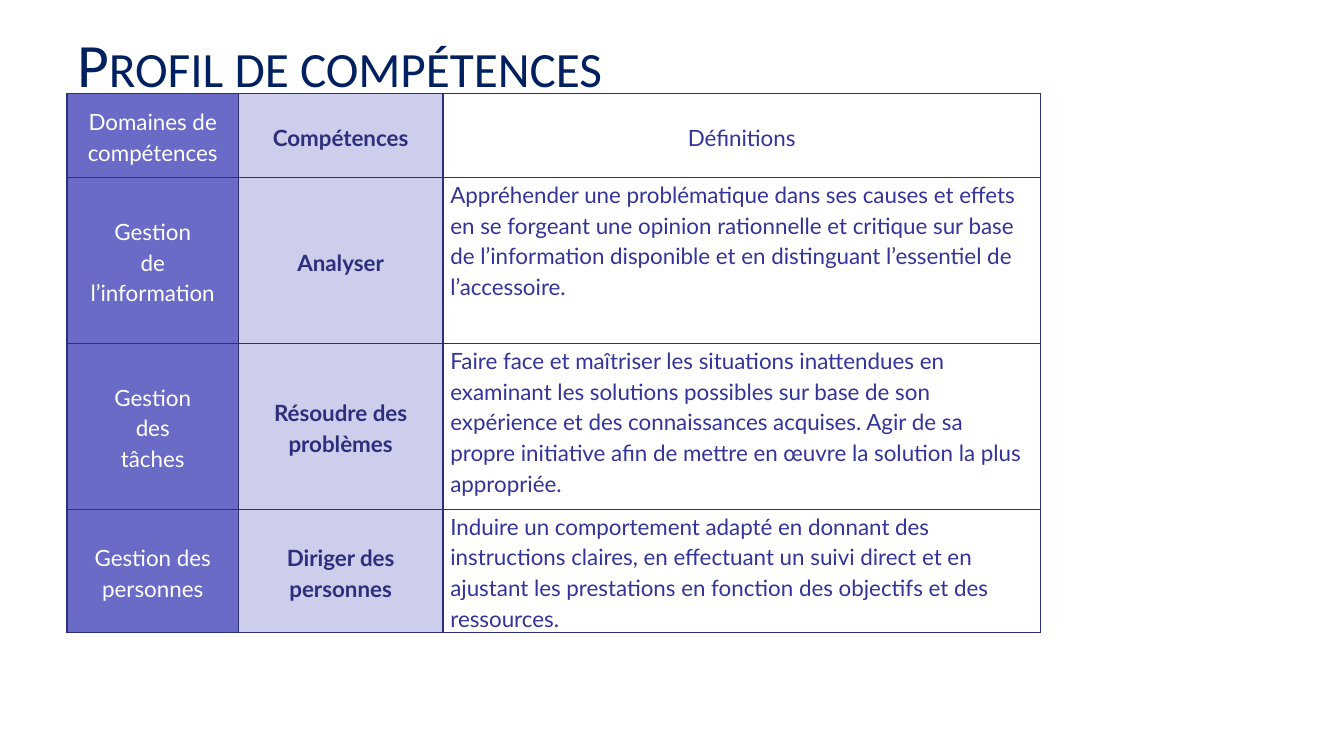
from lxml.etree import SubElement
from pptx import Presentation
from pptx.dml.color import RGBColor
from pptx.enum.text import MSO_ANCHOR, PP_ALIGN
from pptx.oxml.ns import qn
from pptx.util import Pt

PX = 9525  # EMU per px, 96 px to the inch

NAVY = RGBColor(0x00, 0x20, 0x60)
INDIGO = RGBColor(0x2E, 0x2F, 0x7C)
VIOLET = RGBColor(0x6A, 0x6B, 0xC7)
LAVENDER = RGBColor(0xCD, 0xCD, 0xEC)
BLUE = RGBColor(0x33, 0x33, 0x99)
WHITE = RGBColor(0xFF, 0xFF, 0xFF)

COLUMN_WIDTHS = [163, 195, 569]
ROW_HEIGHTS = [80, 158, 158, 117]

# Per column: fill, text colour, bold
COLUMN_LOOKS = [
    (VIOLET, WHITE, False),
    (LAVENDER, INDIGO, True),
    (None, BLUE, False),
]

PROFILE = [
    ("Domaines de compétences", "Compétences", "Définitions"),
    ("Gestion\nde\nl’information", "Analyser",
     "Appréhender une problématique dans ses causes et effets en se forgeant "
     "une opinion rationnelle et critique sur base de l’information disponible "
     "et en distinguant l’essentiel de l’accessoire."),
    ("Gestion\ndes\ntâches", "Résoudre des problèmes",
     "Faire face et maîtriser les situations inattendues en examinant les "
     "solutions possibles sur base de son expérience et des connaissances "
     "acquises. Agir de sa propre initiative afin de mettre en œuvre la "
     "solution la plus appropriée."),
    ("Gestion des personnes", "Diriger des personnes",
     "Induire un comportement adapté en donnant des instructions claires, en "
     "effectuant un suivi direct et en ajustant les prestations en fonction "
     "des objectifs et des ressources."),
]


def add_run(paragraph, text, font_name, size, color, bold=False):
    run = paragraph.add_run()
    run.text = text
    run.font.name = font_name
    run.font.size = Pt(size)
    run.font.color.rgb = color
    run.font.bold = bold
    return run


def add_title(slide, text):
    title = slide.shapes.add_textbox(64 * PX, 17 * PX, 1152 * PX, 103 * PX)
    frame = title.text_frame
    frame.word_wrap = True
    frame.vertical_anchor = MSO_ANCHOR.MIDDLE
    frame.margin_bottom = 13 * PX
    paragraph = frame.paragraphs[0]
    paragraph.line_spacing = 0.9
    heading = add_run(paragraph, text, "Calibri", 44, NAVY)
    heading.font._element.set("cap", "small")


def set_borders(cell, row, column):
    """Thick lines around the header row and on the outer sides."""
    thick_edges = {
        "a:lnL": column == 0,
        "a:lnR": column == len(COLUMN_WIDTHS) - 1,
        "a:lnT": row <= 1,
        "a:lnB": row == 0,
    }
    properties = cell._tc.get_or_add_tcPr()
    for edge, thick in thick_edges.items():
        line = SubElement(properties, qn(edge), w=str(Pt(1.5 if thick else 1)))
        line_fill = SubElement(line, qn("a:solidFill"))
        SubElement(line_fill, qn("a:srgbClr"), val=str(INDIGO))


def fill_cell(cell, text, row, column):
    background, color, bold = COLUMN_LOOKS[column]
    is_definition = row > 0 and column == 2

    set_borders(cell, row, column)
    if background is None:
        cell.fill.background()
    else:
        cell.fill.solid()
        cell.fill.fore_color.rgb = background

    cell.margin_left = cell.margin_right = 7 * PX
    cell.margin_top = cell.margin_bottom = 0
    cell.vertical_anchor = MSO_ANCHOR.TOP if is_definition else MSO_ANCHOR.MIDDLE

    paragraph = cell.text_frame.paragraphs[0]
    paragraph.alignment = PP_ALIGN.LEFT if is_definition else PP_ALIGN.CENTER
    paragraph.line_spacing = 1.15
    paragraph.space_after = Pt(12 if is_definition else 3)
    for index, line in enumerate(text.split("\n")):
        if index:
            paragraph.add_line_break()
        add_run(paragraph, line, "Lato", 16, color, bold)


def add_profile_table(slide):
    profile = slide.shapes.add_table(
        len(ROW_HEIGHTS), len(COLUMN_WIDTHS), 64 * PX, 89 * PX,
        sum(COLUMN_WIDTHS) * PX, sum(ROW_HEIGHTS) * PX).table
    profile.first_row = False
    profile.horz_banding = False
    for column, width in zip(profile.columns, COLUMN_WIDTHS):
        column.width = width * PX
    for row, height in zip(profile.rows, ROW_HEIGHTS):
        row.height = height * PX
    for row, texts in enumerate(PROFILE):
        for column, text in enumerate(texts):
            fill_cell(profile.cell(row, column), text, row, column)


def main():
    presentation = Presentation()
    presentation.slide_width = 1280 * PX
    presentation.slide_height = 720 * PX
    slide = presentation.slides.add_slide(presentation.slide_layouts[6])

    # Heading
    add_title(slide, "Profil de compétences")
    # Competence profile
    add_profile_table(slide)

    presentation.save("out.pptx")


if __name__ == "__main__":
    main()
